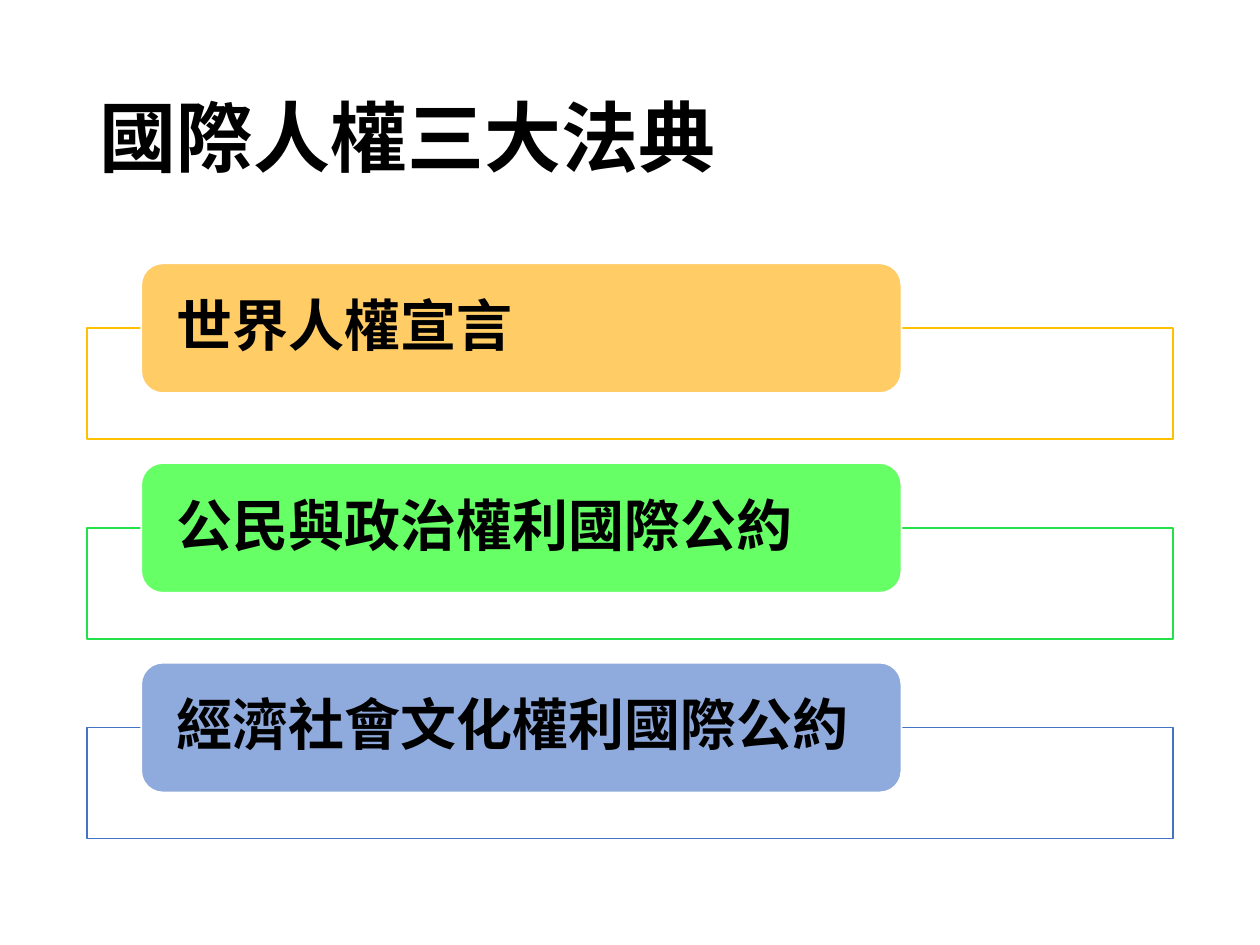
from dataclasses import dataclass

import pptx
import pptx.dml.color
import pptx.enum.shapes
import pptx.enum.text
import pptx.oxml.ns
import pptx.util
from lxml import etree

In = pptx.util.Inches
SHAPE = pptx.enum.shapes.MSO_SHAPE


@dataclass(frozen=True)
class Theme:
    font: str = "Noto Sans CJK SC"
    text: str = "000000"
    paper: str = "FFFFFF"
    title_size: int = 44
    label_size: int = 32
    line_width: int = 1


THEME = Theme()
WIDTH, HEIGHT = 10, 7.5

# Vertical rhythm: each row is a label overlapping the top of a frame
MARGIN = 0.69
CONTENT_W = WIDTH - 2 * MARGIN
FIRST_ROW, ROW_PITCH = 2.09, 1.585
LABEL_H, FRAME_H = 1.03, 0.88
LABEL_INDENT, LABEL_SHARE = 0.05 * CONTENT_W, 0.7

# Label, fill colour, frame colour
COVENANTS = [
    ("世界人權宣言", "FFCC66", "FFC000"),
    ("公民與政治權利國際公約", "66FF66", "23E148"),
    ("經濟社會文化權利國際公約", "8FAADC", "4472C4"),
]


def rgb(value):
    return pptx.dml.color.RGBColor.from_string(value)


def write_text(s, text, size, inset_x, inset_y):
    tf = s.text_frame
    tf.word_wrap = True
    tf.vertical_anchor = pptx.enum.text.MSO_ANCHOR.MIDDLE
    tf.margin_left = tf.margin_right = In(inset_x)
    tf.margin_top = tf.margin_bottom = In(inset_y)
    tf.text = text
    p = tf.paragraphs[0]
    p.alignment = pptx.enum.text.PP_ALIGN.LEFT
    p.line_spacing = 0.9
    r = p.runs[0]
    r.font.name = THEME.font
    r.font.size = pptx.util.Pt(size)
    r.font.bold = True
    r.font.color.rgb = rgb(THEME.text)
    # Chinese characters take the East Asian typeface
    ea = etree.SubElement(r.font._element, pptx.oxml.ns.qn("a:ea"))
    ea.set("typeface", THEME.font)


def add_title(slide, text):
    s = slide.shapes.add_textbox(In(MARGIN), In(0.4), In(CONTENT_W), In(1.45))
    write_text(s, text, THEME.title_size, 0.1, 0.05)


def add_box(slide, kind, x, y, w, h, fill, line):
    s = slide.shapes.add_shape(kind, In(x), In(y), In(w), In(h))
    s.shadow.inherit = False
    s.fill.solid()
    s.fill.fore_color.rgb = rgb(fill)
    s.line.color.rgb = rgb(line)
    s.line.width = pptx.util.Pt(THEME.line_width)
    return s


def set_opacity(s, percent):
    color = s.fill._xPr.find(".//" + pptx.oxml.ns.qn("a:srgbClr"))
    alpha = etree.SubElement(color, pptx.oxml.ns.qn("a:alpha"))
    alpha.set("val", str(percent * 1000))


def add_covenant(slide, row, text, fill, line):
    top = FIRST_ROW + row * ROW_PITCH
    # The frame starts at the label's mid-height
    frame = add_box(slide, SHAPE.RECTANGLE, MARGIN, top + LABEL_H / 2,
                    CONTENT_W, FRAME_H, THEME.paper, line)
    set_opacity(frame, 90)
    label = add_box(slide, SHAPE.ROUNDED_RECTANGLE, MARGIN + LABEL_INDENT, top,
                    CONTENT_W * LABEL_SHARE, LABEL_H, fill, THEME.paper)
    write_text(label, text, THEME.label_size, 0.23, 0)


def main():
    prs = pptx.Presentation()
    prs.slide_width, prs.slide_height = In(WIDTH), In(HEIGHT)
    slide = prs.slides.add_slide(prs.slide_layouts[6])

    add_title(slide, "國際人權三大法典")
    for row, covenant in enumerate(COVENANTS):
        add_covenant(slide, row, *covenant)

    prs.save("out.pptx")


if __name__ == "__main__":
    main()
